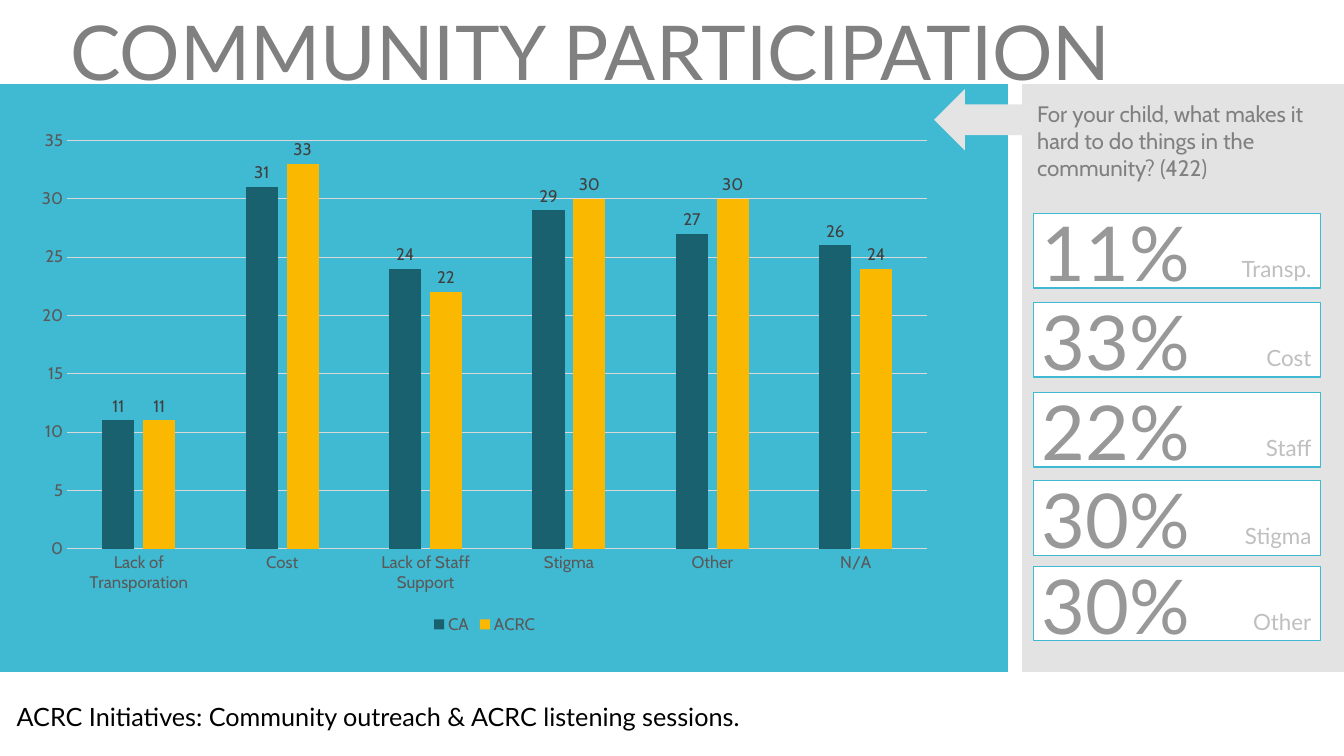
from dataclasses import dataclass
from lxml.etree import SubElement as Sub
from pptx import Presentation as Deck
from pptx.chart.data import CategoryChartData as Data
from pptx.dml.color import RGBColor as Rgb
from pptx.enum.chart import XL_CHART_TYPE as Kind, XL_LABEL_POSITION as Spot
from pptx.enum.chart import XL_LEGEND_POSITION as Side, XL_TICK_MARK as Tick
from pptx.enum.shapes import MSO_SHAPE as Form
from pptx.enum.text import MSO_AUTO_SIZE as Fit, PP_ALIGN as Align
from pptx.oxml.ns import qn
from pptx.util import Inches, Pt

# Grid of 16 columns by 9 rows
WIDE, HIGH = Inches(13.33), Inches(7.5)
COL, ROW = WIDE / 16, HIGH / 9


@dataclass(frozen=True)
class Theme:
    head: str = "Lato"
    body: str = "Cabin"
    white: str = "FFFFFF"
    black: str = "000000"
    teal: str = "40BAD2"
    deep: str = "1A616F"
    gold: str = "FAB900"
    side: str = "C8C8C8"
    arrow: str = "E4E4E4"
    gray: str = "808080"
    stat: str = "989898"
    pale: str = "BFBFBF"
    grid: str = "D9D9D9"
    axis: str = "595959"
    label: str = "404040"
    big: int = 54
    foot: int = 18
    note: int = 16
    small: int = 12


T = Theme()
TITLE = dict(name=T.head, size=T.big, color=T.gray)
ASK = dict(name=T.body, size=T.note, color=T.gray)
STAT = dict(name=T.head, size=T.big, color=T.stat)
TAG = dict(name=T.head, size=T.note, color=T.pale)
FOOT = dict(name=T.head, size=T.foot, color=T.black)
AXIS = dict(name=T.body, size=T.small, color=T.axis)
LABEL = dict(name=T.body, size=T.small, color=T.label)

CARDS = [("11%", "Transp.", 2.54), ("33%", "Cost", 3.6), ("22%", "Staff", 4.67),
         ("30%", "Stigma", 5.72), ("30%", "Other", 6.74)]
CATS = ["Lack of Transporation", "Cost", "Lack of Staff Support",
        "Stigma", "Other", "N/A"]
BARS = [("CA", T.deep, (11, 31, 24, 29, 27, 26)),
        ("ACRC", T.gold, (11, 33, 22, 30, 30, 24))]


def place(col, row, cols, rows):
    return [round(n) for n in (col * COL, row * ROW, cols * COL, rows * ROW)]


def put(item, **vals):
    for key, val in vals.items():
        setattr(item, key, val)


def style(font, look):
    for key, val in look.items():
        if key == "color":
            font.color.rgb = Rgb.from_string(val)
        else:
            setattr(font, key, Pt(val) if key == "size" else val)


def paint(fill, color):
    fill.solid()
    fill.fore_color.rgb = Rgb.from_string(color)


def block(slide, spot, color, edge=None, form=Form.RECTANGLE, alpha=None):
    shape = slide.shapes.add_shape(form, *place(*spot))
    shape.shadow.inherit = False
    paint(shape.fill, color)
    if edge:
        paint(shape.line.fill, edge)
        shape.line.width = Pt(0.85)
    else:
        shape.line.fill.background()
    if alpha:
        tone = shape.fill._xPr.find(".//" + qn("a:srgbClr"))
        Sub(tone, qn("a:alpha"), val=str(alpha * 1000))
    return shape


def write(slide, spot, text, look, **para):
    frame = slide.shapes.add_textbox(*place(*spot)).text_frame
    put(frame, word_wrap=True, auto_size=Fit.SHAPE_TO_FIT_TEXT)
    line = frame.paragraphs[0]
    put(line, **para)
    run = line.add_run()
    run.text = text
    style(run.font, look)


def card(slide, stat, tag, top):
    block(slide, (12.3, top, 3.42, 0.89), T.white, T.teal)
    write(slide, (14.6, top + 0.44, 1.13, 0.44), tag, TAG, alignment=Align.RIGHT)
    write(slide, (12.28, top - 0.15, 2.17, 1.21), stat, STAT)


def rule(line):
    paint(line.fill, T.grid)
    line.width = Pt(0.75)


def graph(slide, spot):
    data = Data()
    data.categories = CATS
    for name, _, vals in BARS:
        data.add_series(name, vals)
    chart = slide.shapes.add_chart(Kind.COLUMN_CLUSTERED, *place(*spot), data).chart
    style(chart.font, AXIS)
    put(chart, has_title=False, has_legend=True)
    put(chart.legend, position=Side.BOTTOM, include_in_layout=False)
    style(chart.legend.font, AXIS)

    # Axes
    cat, val = chart.category_axis, chart.value_axis
    for axis in (cat, val):
        put(axis, major_tick_mark=Tick.NONE, minor_tick_mark=Tick.NONE)
        style(axis.tick_labels.font, AXIS)
    rule(cat.format.line)
    put(val, minimum_scale=0, maximum_scale=35, major_unit=5)
    rule(val.major_gridlines.format.line)
    val.format.line.fill.background()

    # Bars and their values
    plot = chart.plots[0]
    put(plot, gap_width=219, overlap=-27, vary_by_categories=False)
    for bar, (_, color, _) in zip(plot.series, BARS):
        paint(bar.format.fill, color)
        put(bar.data_labels, show_value=True, position=Spot.OUTSIDE_END)
        style(bar.data_labels.font, LABEL)


def main():
    deck = Deck()
    put(deck, slide_width=WIDE, slide_height=HIGH)
    slide = deck.slides.add_slide(deck.slide_layouts[6])

    # Panels
    block(slide, (0, 1, 12, 7), T.teal)
    block(slide, (12.17, 1, 3.84, 7), T.side, alpha=50)

    # Title and question
    write(slide, (0.72, 0, 13.19, 1.21), "COMMUNITY PARTICIPATION", TITLE)
    write(slide, (12.23, 1.13, 3.72, 1.09),
          "For your child, what makes it hard to do things in the community? (422)", ASK)

    # Result cards
    for stat, tag, top in CARDS:
        card(slide, stat, tag, top)

    # Arrow, chart and footer
    arrow = block(slide, (11.12, 1.06, 1.18, 0.73), T.arrow, form=Form.RIGHT_ARROW)
    arrow.rotation = 180
    graph(slide, (0.28, 1.43, 10.98, 6.17))
    write(slide, (0.08, 8.26, 15.91, 0.49),
          "ACRC Initiatives: Community outreach & ACRC listening sessions.",
          FOOT, line_spacing=1.07, space_after=Pt(8))

    deck.save("out.pptx")


if __name__ == "__main__":
    main()
